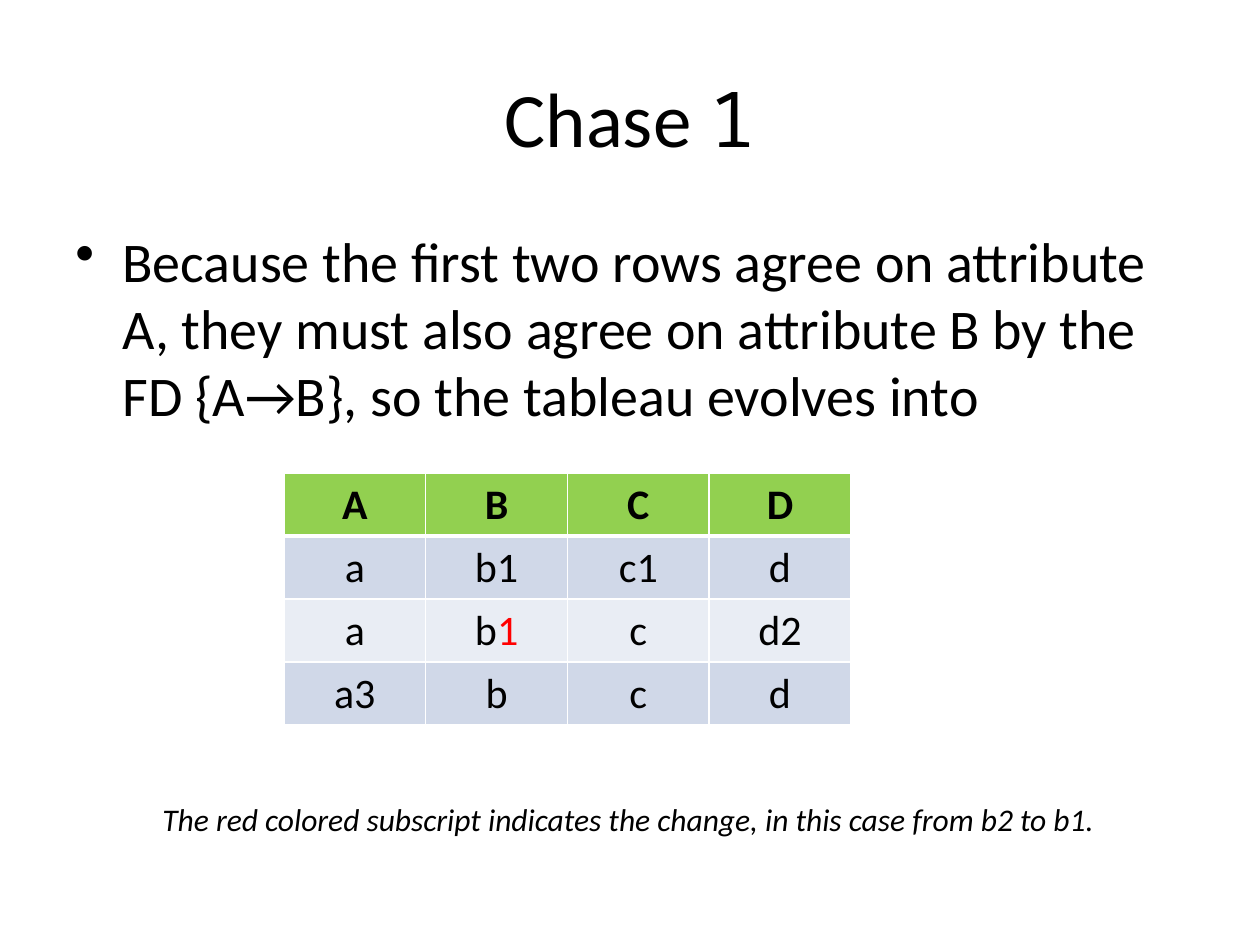
from dataclasses import dataclass

from lxml.etree import SubElement
from pptx import Presentation
from pptx.dml.color import RGBColor as Rgb
from pptx.enum.text import MSO_ANCHOR as Anchor, PP_ALIGN as Align
from pptx.oxml.ns import qn
from pptx.util import Emu, Pt


@dataclass(frozen=True)
class Theme:
    face: str = "Calibri"
    digit_face: str = "Noto Sans Mono"
    text: str = "000000"
    changed: str = "FF0000"
    header: str = "92D050"
    bands: tuple = ("D0D8E8", "E9EDF4")
    border: str = "FFFFFF"
    title_size: int = 44
    body_size: int = 32
    table_size: int = 24
    note_size: int = 18


THEME = Theme()
TABLEAU = [
    ["A", "B", "C", "D"],
    ["a", "b1", "c1", "d"],
    ["a", "b1", "c", "d2"],
    ["a3", "b", "c", "d"],
]
CHANGED_CELL = (2, 1)


def px(length):
    return Emu(round(length * 914400 / 126))


def style(paragraph, size, align=Align.LEFT, bold=False, italic=False):
    paragraph.alignment = align
    font = paragraph.font
    font.name, font.size = THEME.face, Pt(size)
    font.bold, font.italic = bold, italic
    font.color.rgb = Rgb.from_string(THEME.text)


def add_text(slide, box, size, text, wrap=True, anchor=Anchor.TOP, **look):
    frame = slide.shapes.add_textbox(*map(px, box)).text_frame
    frame.word_wrap = wrap
    frame.vertical_anchor = anchor
    paragraph = frame.paragraphs[0]
    paragraph.add_run().text = text
    style(paragraph, size, **look)
    return paragraph


def add_bullet(paragraph, indent):
    paragraph.space_before = Pt(THEME.body_size * 0.2)
    properties = paragraph._p.get_or_add_pPr()
    properties.set("marL", str(px(indent)))
    properties.set("indent", str(-px(indent)))
    bullet = SubElement(properties, qn("a:buChar"), char="•")
    properties.find(qn("a:defRPr")).addprevious(bullet)


def set_borders(cell, bottom):
    properties = cell._tc.get_or_add_tcPr()
    for side, width in (("L", 1), ("R", 1), ("T", 1), ("B", bottom)):
        line = SubElement(properties, qn(f"a:ln{side}"), w=str(Pt(width)))
        fill = SubElement(line, qn("a:solidFill"))
        SubElement(fill, qn("a:srgbClr"), val=THEME.border)


def fill_cell(cell, text, row, changed):
    is_header = row == 0
    set_borders(cell, 3 if is_header else 1)
    color = THEME.header if is_header else THEME.bands[(row - 1) % 2]
    cell.fill.solid()
    cell.fill.fore_color.rgb = Rgb.from_string(color)
    paragraph = cell.text_frame.paragraphs[0]
    if changed:
        paragraph.add_run().text = text[:-1]
        subscript = paragraph.add_run()
        subscript.text = text[-1]
        subscript.font.color.rgb = Rgb.from_string(THEME.changed)
    else:
        paragraph.add_run().text = text
    style(paragraph, THEME.table_size, Align.CENTER, bold=is_header)


def add_tableau(slide, box):
    frame = slide.shapes.add_table(len(TABLEAU), len(TABLEAU[0]), *map(px, box))
    table = frame.table
    table.first_row = table.horz_banding = False
    for row, values in enumerate(TABLEAU):
        for column, value in enumerate(values):
            fill_cell(table.cell(row, column), value, row, (row, column) == CHANGED_CELL)


def main():
    deck = Presentation()
    deck.slide_width, deck.slide_height = px(1260), px(945)
    slide = deck.slides.add_slide(deck.slide_layouts[6])

    title = add_text(slide, (63, 38, 1134, 157), THEME.title_size, "Chase ",
                     anchor=Anchor.MIDDLE, align=Align.CENTER)
    number = title.add_run()
    number.text = "1"
    number.font.name = THEME.digit_face

    explanation = add_text(
        slide, (63, 220, 1134, 624), THEME.body_size,
        "Because the first two rows agree on attribute A, they must also agree "
        "on attribute B by the FD {A→B}, so the tableau evolves into")
    add_bullet(explanation, 47)

    add_tableau(slide, (284, 473, 567, 252))
    add_text(slide, (150, 794, 960, 50), THEME.note_size,
             "The red colored subscript indicates the change, in this case from b2 to b1.",
             wrap=False, italic=True)
    deck.save("out.pptx")


if __name__ == "__main__":
    main()
